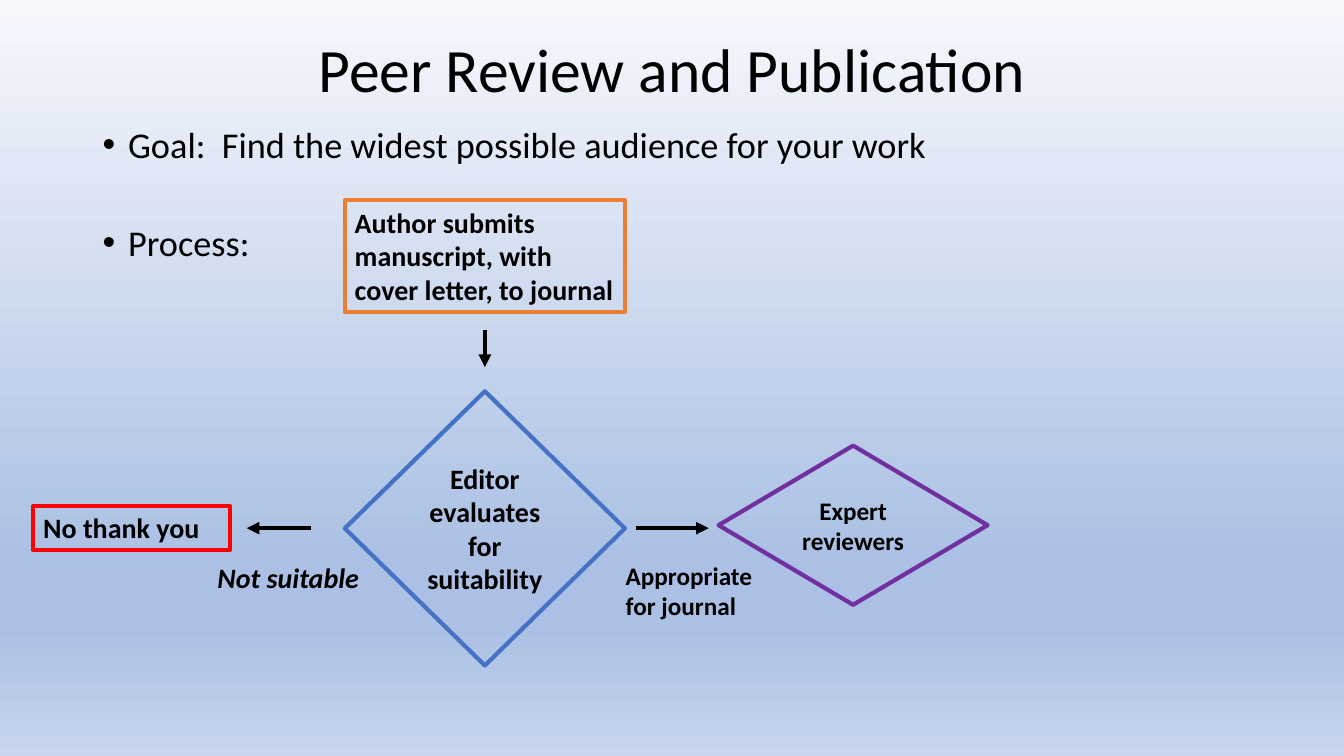
from pptx import Presentation
from pptx.dml.color import RGBColor as RGB
from pptx.enum.shapes import MSO_CONNECTOR as LINK, MSO_SHAPE as SHAPE
from pptx.enum.text import MSO_ANCHOR as ANCHOR, PP_ALIGN as ALIGN
from pptx.oxml.ns import qn
from pptx.util import Cm, Pt
from lxml.etree import SubElement as Sub

ink = {"black": "000000", "orange": "ED7D31", "blue": "4472C4",
       "red": "FF0000", "purple": "7030A0",
       "pale": "F6F8FC", "mid": "ABC0E4", "light": "C7D5ED"}


def write(frame, lines, size, bold=False, italic=False, align=ALIGN.LEFT):
    frame.word_wrap = True
    frame.text = "\n".join(lines)
    for para in frame.paragraphs:
        para.alignment = align
        for run in para.runs:
            font = run.font
            font.name, font.size = "Calibri", Pt(size)
            font.bold, font.italic = bold, italic
            font.color.rgb = RGB.from_string(ink["black"])


deck = Presentation()
deck.slide_width, deck.slide_height = Cm(33.87), Cm(19.05)
slide = deck.slides.add_slide(deck.slide_layouts[6])
shapes = slide.shapes

fill = slide.background.fill
fill.gradient()
fill.gradient_angle = 270
stops = slide.element.find(".//" + qn("a:gsLst"))
for stop in list(stops):
    stops.remove(stop)
for spot, tone in [(0, "pale"), (74, "mid"), (83, "mid"), (100, "light")]:
    stop = Sub(stops, qn("a:gs"), pos=str(spot * 1000))
    Sub(stop, qn("a:srgbClr"), val=ink[tone])

title = shapes.add_textbox(Cm(2.34), Cm(0), Cm(29.21), Cm(3.68)).text_frame
write(title, ["Peer Review and Publication"], 44, align=ALIGN.CENTER)
title.vertical_anchor = ANCHOR.MIDDLE
title.paragraphs[0].line_spacing = 0.9

body = shapes.add_textbox(Cm(2.34), Cm(3.18), Cm(29.21), Cm(3.78)).text_frame
write(body, ["Goal:  Find the widest possible audience for your work",
             "Process:"], 25.9)
for para, gap in zip(body.paragraphs, (10, 45)):
    para.line_spacing = 0.8
    para.space_before = Pt(gap)
    props = para._p.get_or_add_pPr()
    props.set("marL", str(Cm(0.64)))
    props.set("indent", str(-Cm(0.64)))
    Sub(props, qn("a:buFont"), typeface="Arial")
    Sub(props, qn("a:buChar"), char="•")

steps = [
    (SHAPE.RECTANGLE, 8.69, 5.05, 7.06, 2.82, "orange", 20,
     "Author submits manuscript, with cover letter, to journal"),
    (SHAPE.DIAMOND, 8.69, 9.86, 7.06, 6.91, "blue", 20,
     "Editor evaluates for suitability"),
    (SHAPE.RECTANGLE, 0.84, 12.75, 4.95, 1.12, "red", 20, "No thank you"),
    (SHAPE.DIAMOND, 18.11, 11.23, 6.78, 4.01, "purple", 18,
     "Expert reviewers"),
]
for kind, x, y, w, h, tone, size, text in steps:
    step = shapes.add_shape(kind, Cm(x), Cm(y), Cm(w), Cm(h))
    step.shadow.inherit = False
    step.fill.background()
    step.line.color.rgb = RGB.from_string(ink[tone])
    step.line.width = Pt(3)
    choice = kind == SHAPE.DIAMOND
    write(step.text_frame, [text], size, bold=True,
          align=ALIGN.CENTER if choice else ALIGN.LEFT)
    step.text_frame.vertical_anchor = ANCHOR.MIDDLE if choice else ANCHOR.TOP

labels = [(5.23, 4.11, 1.12, 20, True, "Not suitable"),
          (15.52, 4.52, 1.8, 18, False, "Appropriate for journal")]
for x, w, h, size, slant, text in labels:
    label = shapes.add_textbox(Cm(x), Cm(14), Cm(w), Cm(h))
    write(label.text_frame, [text], size, bold=True, italic=slant)

arrows = [(12.22, 8.31, 12.22, 9.25),
          (7.85, 13.31, 6.22, 13.31),
          (16.03, 13.31, 17.86, 13.31)]
for ends in arrows:
    arrow = shapes.add_connector(LINK.STRAIGHT, *map(Cm, ends))
    arrow.line.color.rgb = RGB.from_string(ink["black"])
    arrow.line.width = Pt(3)
    Sub(arrow.line._get_or_add_ln(), qn("a:tailEnd"), type="triangle")
    Sub(arrow._element.spPr, qn("a:effectLst"))

deck.save("out.pptx")
